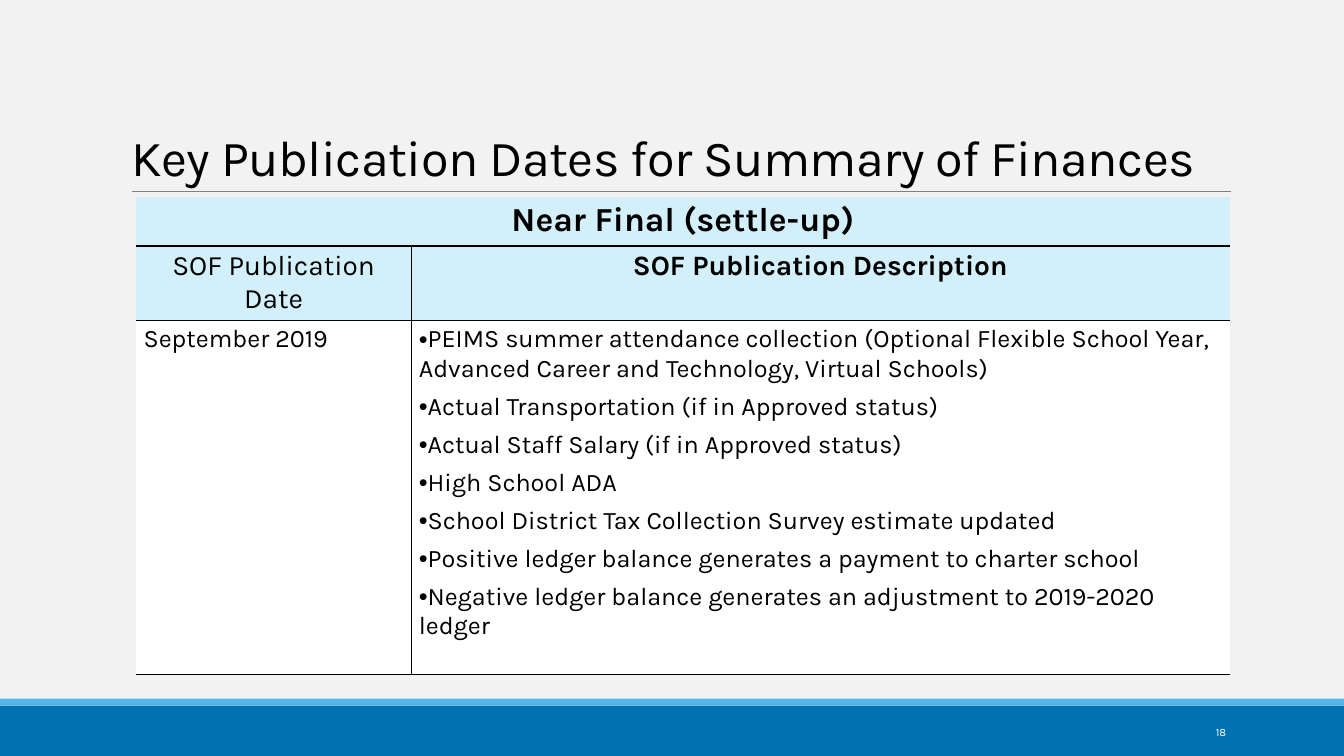
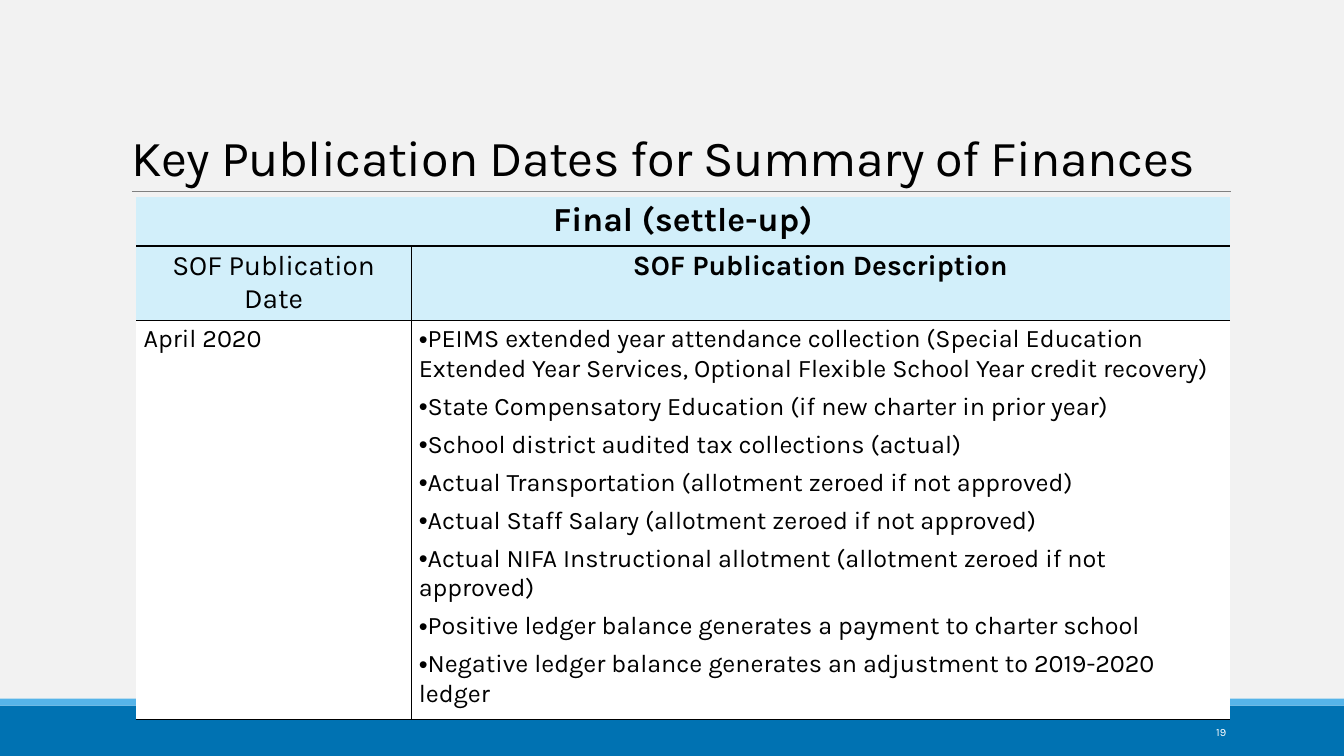
from lxml import etree
from pptx import Presentation
from pptx.dml.color import RGBColor
from pptx.enum.shapes import MSO_CONNECTOR, MSO_SHAPE
from pptx.enum.text import MSO_ANCHOR, MSO_AUTO_SIZE, PP_ALIGN
from pptx.oxml.ns import qn
from pptx.util import Pt

LEFT, CENTER, RIGHT = PP_ALIGN.LEFT, PP_ALIGN.CENTER, PP_ALIGN.RIGHT
BOTTOM, MIDDLE = MSO_ANCHOR.BOTTOM, MSO_ANCHOR.MIDDLE
FIXED = MSO_AUTO_SIZE.NONE
RECT = MSO_SHAPE.RECTANGLE
STRAIGHT = MSO_CONNECTOR.STRAIGHT

WIDE, HIGH = 960, 540
FONT = "Karla"
HEAD = "Key Publication Dates for Summary of Finances"
COLORS = {
    "back": "F2F2F2",
    "band": "0072B2",
    "strip": "56B4E9",
    "rule": "808080",
    "text": "000000",
    "label": "D2EFFA",
    "white": "FFFFFF",
}
PAGES = [
    {
        "number": 18,
        "name": "Near Final (settle-up)",
        "date": "September 2019",
        "height": 252.7,
        "items": [
            "PEIMS summer attendance collection (Optional Flexible School Year, "
            "Advanced Career and Technology, Virtual Schools)",
            "Actual Transportation (if in Approved status)",
            "Actual Staff Salary (if in Approved status)",
            "High School ADA",
            "School District Tax Collection Survey estimate updated",
            "Positive ledger balance generates a payment to charter school",
            "Negative ledger balance generates an adjustment to 2019-2020 ledger",
        ],
    },
    {
        "number": 19,
        "name": "Final (settle-up)",
        "date": "April 2020",
        "height": 280,
        "items": [
            "PEIMS extended year attendance collection (Special Education "
            "Extended Year Services, Optional Flexible School Year credit recovery)",
            "State Compensatory Education (if new charter in prior year)",
            "School district audited tax collections (actual)",
            "Actual Transportation (allotment zeroed if not approved)",
            "Actual Staff Salary (allotment zeroed if not approved)",
            "Actual NIFA Instructional allotment (allotment zeroed if not approved)",
            "Positive ledger balance generates a payment to charter school",
            "Negative ledger balance generates an adjustment to 2019-2020 ledger",
        ],
    },
]


class Deck:
    def __init__(self):
        self.prs = Presentation()
        self.prs.slide_width, self.prs.slide_height = Pt(WIDE), Pt(HIGH)
        self.paint(self.prs.slide_master.background.fill, "back")
        self.slide = None

    def color(self, name):
        return RGBColor.from_string(COLORS[name])

    def paint(self, fill, name):
        fill.solid()
        fill.fore_color.rgb = self.color(name)

    def style(self, para, size, color="text", align=LEFT, bold=False):
        para.alignment = align
        font = para.font
        font.name, font.size, font.bold = FONT, Pt(size), bold
        font.color.rgb = self.color(color)

    def start(self, number):
        self.slide = self.prs.slides.add_slide(self.prs.slide_layouts[5])
        self.band(504, 36, "band")
        self.band(499, 5, "strip")
        self.rule(94.3, 879.1, 136.8)
        self.title(HEAD)
        self.page(number)

    def band(self, top, height, color):
        band = self.slide.shapes.add_shape(RECT, 0, Pt(top), Pt(WIDE), Pt(height))
        band.shadow.inherit = False
        self.paint(band.fill, color)
        band.line.fill.background()

    def rule(self, left, right, top):
        rule = self.slide.shapes.add_connector(
            STRAIGHT, Pt(left), Pt(top), Pt(right), Pt(top))
        rule.line.color.rgb = self.color("rule")
        rule.line.width = Pt(0.5)
        etree.SubElement(rule._element.spPr, qn("a:effectLst"))

    def title(self, text):
        title = self.slide.shapes.title
        title.left, title.top = Pt(86.8), Pt(22.4)
        title.width, title.height = Pt(792), Pt(114.4)
        frame = title.text_frame
        frame.text = text
        frame.auto_size = FIXED
        frame.vertical_anchor = BOTTOM
        para = frame.paragraphs[0]
        self.style(para, 36)
        para._p.pPr.find(qn("a:defRPr")).set("spc", "-40")

    def page(self, number):
        box = self.slide.shapes.add_textbox(Pt(780), Pt(508.4), Pt(103), Pt(28.8))
        frame = box.text_frame
        frame.word_wrap = True
        frame.vertical_anchor = MIDDLE
        frame.text = str(number)
        self.style(frame.paragraphs[0], 7.9, "white", RIGHT)

    def edges(self, cell, sides):
        props = cell._tc.get_or_add_tcPr()
        for side in "LRTB":
            line = etree.SubElement(props, qn("a:ln" + side), w=str(Pt(1)))
            if side in sides:
                fill = etree.SubElement(line, qn("a:solidFill"))
                etree.SubElement(fill, qn("a:srgbClr"), val=COLORS["text"])
            else:
                etree.SubElement(line, qn("a:noFill"))

    def cell(self, cell, texts, size, fill, sides, bullet=False, **look):
        cell.margin_left = cell.margin_right = Pt(5.4)
        cell.margin_top = cell.margin_bottom = Pt(2.7)
        self.edges(cell, sides)
        self.paint(cell.fill, fill)
        frame = cell.text_frame
        frame.text = "\n".join(texts)
        for index, para in enumerate(frame.paragraphs):
            if index:
                para.space_before = Pt(6)
            if bullet:
                props = para._p.get_or_add_pPr()
                props.set("marL", "0")
                props.set("indent", str(-Pt(22.5)))
                etree.SubElement(props, qn("a:buFont"), typeface="Arial")
                etree.SubElement(props, qn("a:buChar"), char="•")
            self.style(para, size, **look)

    def table(self, name, date, items, height):
        cols, rows = (196.6, 584.6), (34.8, 51.8, height)
        frame = self.slide.shapes.add_table(
            3, 2, Pt(97.2), Pt(140.9), Pt(sum(cols)), Pt(sum(rows)))
        table = frame.table
        table.first_row = table.horz_banding = False
        for col, width in zip(table.columns, cols):
            col.width = Pt(width)
        for row, tall in zip(table.rows, rows):
            row.height = Pt(tall)
        at = table.cell
        at(0, 0).merge(at(0, 1))
        self.cell(at(0, 0), [name], 24, "label", "B", align=CENTER, bold=True)
        self.edges(at(0, 1), "B")
        self.cell(at(1, 0), ["SOF Publication Date"], 20, "label", "RTB", align=CENTER)
        self.cell(at(1, 1), ["SOF Publication Description"], 20, "label", "LTB",
                  align=CENTER, bold=True)
        self.cell(at(2, 0), [date], 18, "white", "RTB")
        self.cell(at(2, 1), items, 18, "white", "LTB", bullet=True)


def main():
    deck = Deck()
    for page in PAGES:
        deck.start(page["number"])
        deck.table(page["name"], page["date"], page["items"], page["height"])
    deck.prs.save("out.pptx")


if __name__ == "__main__":
    main()
